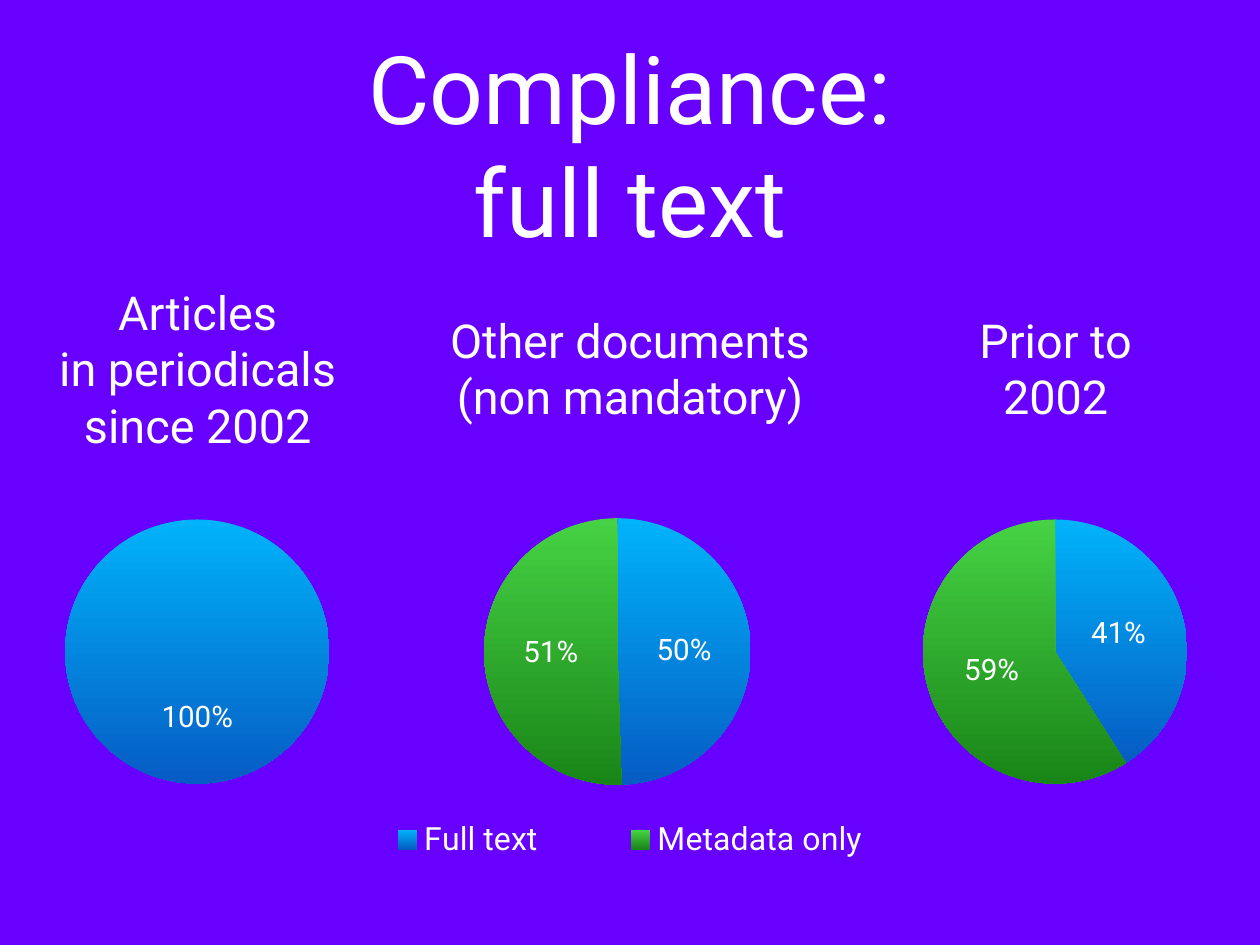
import pptx
import pptx.chart.data
import pptx.dml.color
import pptx.enum.chart
import pptx.enum.text
import pptx.util
from lxml import etree
from pptx.util import Cm, Pt

RGBColor = pptx.dml.color.RGBColor
PURPLE = RGBColor(0x67, 0x00, 0xFF)
WHITE = RGBColor(0xFF, 0xFF, 0xFF)
BLUES = (RGBColor(0x00, 0xB3, 0xFA), RGBColor(0x06, 0x5C, 0xC4))
GREENS = (RGBColor(0x46, 0xD2, 0x44), RGBColor(0x19, 0x85, 0x18))
FONT = "Roboto"


def format_font(font, size):
    values = {"name": FONT, "size": Pt(size)}
    for name, value in values.items():
        setattr(font, name, value)
    font.color.rgb = WHITE


def add_manual_layout(parent, position, **fractions):
    """Place a plot area or legend by fractions of its chart, as child number position."""
    namespace = "{http://schemas.openxmlformats.org/drawingml/2006/chart}"
    for old_layout in parent.findall(namespace + "layout"):
        parent.remove(old_layout)
    layout = etree.Element(namespace + "layout")
    manual = etree.SubElement(layout, namespace + "manualLayout")
    for name, value in fractions.items():
        etree.SubElement(manual, namespace + name).set("val", str(value))
    parent.insert(position, layout)


presentation = pptx.Presentation()
presentation.slide_width = Cm(36.12)
presentation.slide_height = Cm(27.1)
slide = presentation.slides.add_slide(presentation.slide_layouts[6])
slide.background.fill.solid()
slide.background.fill.fore_color.rgb = PURPLE

# Title and column headings: lines, size, margin, wrap, box in cm
texts = [
    (["Compliance:", "full text"], 76.8, 0, True, (3.53, 0.71, 29.06, 6.78)),
    (["Articles", "in periodicals", "since 2002"], 38, 0.15, False, (1.3, 7.98, 8.74, 5.16)),
    (["Other documents", "(non mandatory)"], 38, 0.15, False, (12.5, 8.79, 11.13, 3.53)),
    (["Prior to", "2002"], 38, 0.15, False, (27.61, 8.79, 5.31, 3.53)),
]
for lines, size, margin, wrap, box in texts:
    frame = slide.shapes.add_textbox(*map(Cm, box)).text_frame
    frame_format = {
        "word_wrap": wrap,
        "vertical_anchor": pptx.enum.text.MSO_ANCHOR.MIDDLE,
        "margin_left": Cm(margin),
        "margin_right": Cm(margin),
        "margin_top": Cm(margin),
        "margin_bottom": Cm(margin),
    }
    for name, value in frame_format.items():
        setattr(frame, name, value)
    frame.text = "\n".join(lines)
    for paragraph in frame.paragraphs:
        paragraph.alignment = pptx.enum.text.PP_ALIGN.CENTER
        format_font(paragraph.font, size)

# Pies: series name, percentages, box in cm, plot area, legend
full_plot = {"x": 0.005, "y": 0.005, "w": 0.99, "h": 0.99}
middle_plot = {"x": 0.305, "y": 0.005, "w": 0.356, "h": 0.75}
pies = [
    ("Articles in periodicals since 2002", (100, 0), (1.83, 14.86, 7.65, 7.65), full_plot, False),
    ("Other documents (non mandatory)", (50, 51), (7.32, 14.81, 21.49, 10.19), middle_plot, True),
    ("Prior to 2002", (41, 59), (26.42, 14.86, 7.65, 7.65), full_plot, False),
]
for series_name, percentages, box, plot_area, has_legend in pies:
    chart_data = pptx.chart.data.CategoryChartData()
    chart_data.categories = ["Full text", "Metadata only"]
    chart_data.add_series(series_name, percentages)
    chart = slide.shapes.add_chart(
        pptx.enum.chart.XL_CHART_TYPE.PIE, *map(Cm, box), chart_data
    ).chart
    chart.has_title = False
    format_font(chart.font, 10)
    add_manual_layout(
        chart.plots[0]._element.getparent(), 0,
        layoutTarget="inner", xMode="edge", yMode="edge", **plot_area,
    )

    chart.has_legend = has_legend
    if has_legend:
        chart.legend.position = pptx.enum.chart.XL_LEGEND_POSITION.BOTTOM
        chart.legend.include_in_layout = False
        format_font(chart.legend.font, 26)
        add_manual_layout(
            chart.legend._element, 1, xMode="edge", yMode="edge", x=0.08, y=0.85, w=0.84, h=0.12
        )

    plot = chart.plots[0]
    for index, colors in enumerate((BLUES, GREENS)):
        slice_format = plot.series[0].points[index].format
        slice_format.line.fill.background()
        slice_format.fill.gradient()
        slice_format.fill.gradient_angle = 270
        for stop, color in zip(slice_format.fill.gradient_stops, colors):
            stop.color.rgb = color

    plot.has_data_labels = True
    label_format = {
        "show_value": True,
        "show_percentage": False,
        "number_format": '0"%";;',
        "number_format_is_linked": False,
        "position": pptx.enum.chart.XL_LABEL_POSITION.CENTER,
    }
    for name, value in label_format.items():
        setattr(plot.data_labels, name, value)
    format_font(plot.data_labels.font, 24)

presentation.save("out.pptx")
